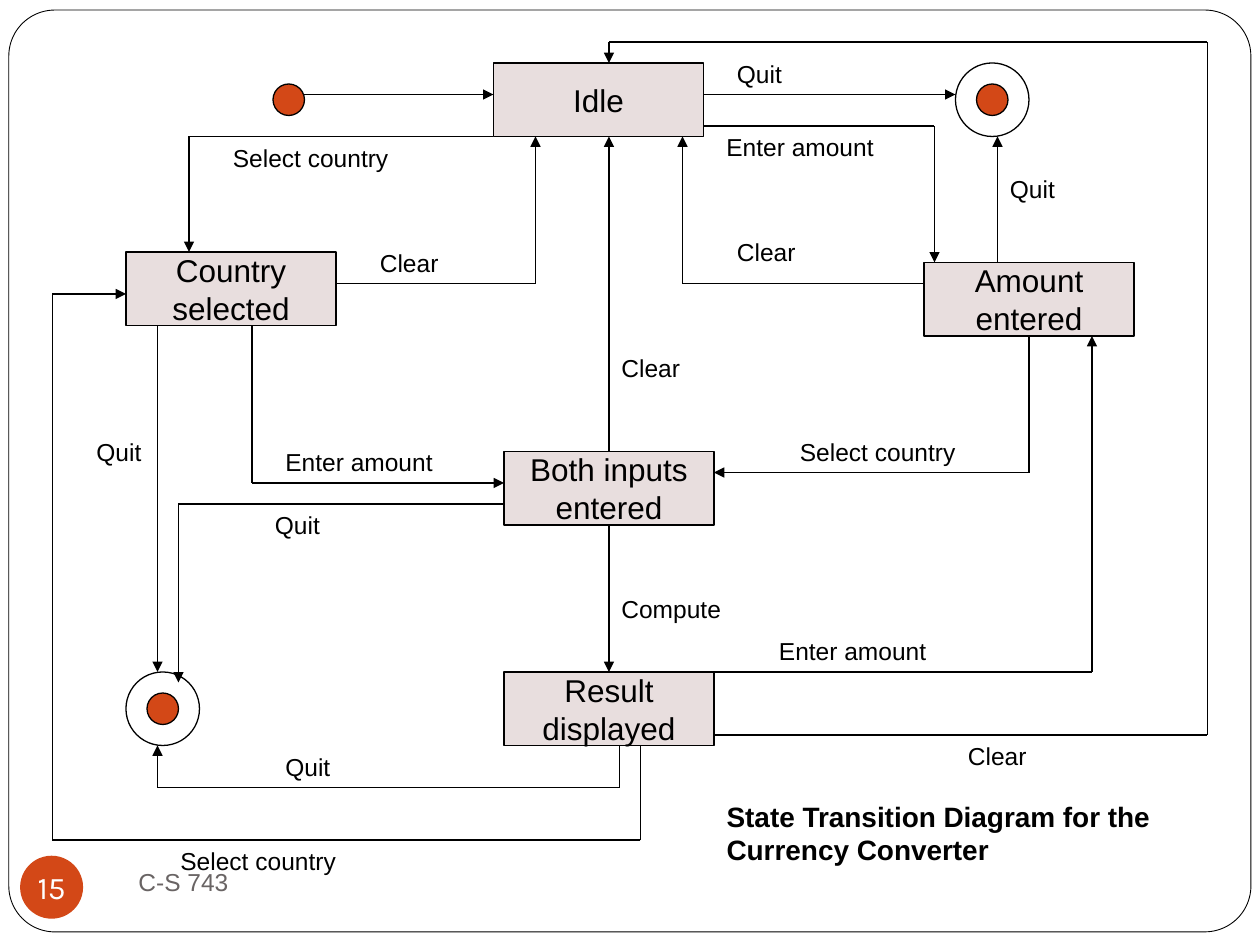
from dataclasses import dataclass

from lxml.etree import SubElement
from pptx import Presentation
from pptx.dml.color import RGBColor
from pptx.enum.shapes import MSO_CONNECTOR, MSO_SHAPE
from pptx.enum.text import MSO_ANCHOR, MSO_AUTO_SIZE, PP_ALIGN
from pptx.oxml.ns import qn
from pptx.util import Cm, Pt


@dataclass(frozen=True)
class Theme:
    """Colours, fonts, sizes and the grid step of the diagram."""
    ink: RGBColor = RGBColor(0x00, 0x00, 0x00)
    paper: RGBColor = RGBColor(0xFF, 0xFF, 0xFF)
    state: RGBColor = RGBColor(0xE8, 0xDE, 0xDE)
    accent: RGBColor = RGBColor(0xD3, 0x48, 0x17)
    muted: RGBColor = RGBColor(0x69, 0x64, 0x64)
    font: str = "Arial"
    number_font: str = "Karla"
    state_size: int = 18
    caption_size: int = 16
    label_size: int = 14
    stroke: float = 0.75
    frame_stroke: float = 0.5
    step: float = 2.54 / 12


THEME = Theme()

STATES = [
    ("Idle", 47, 6),
    ("Country\nselected", 12, 24),
    ("Amount\nentered", 88, 25),
    ("Both inputs\nentered", 48, 43),
    ("Result\ndisplayed", 48, 64),
]
STATE_WIDTH, STATE_HEIGHT = 20, 7
DOT, RING = 3, 7
START = (26, 8)
FINALS = [(91, 6), (12, 64)]

TRANSITIONS = [
    [(29, 9), (47, 9)],
    [(67, 9), (91, 9)],
    [(15, 31), (15, 64)],
    [(47, 13), (18, 13), (18, 24)],
    [(67, 12), (89, 12), (89, 25)],
    [(95, 25), (95, 13)],
    [(59, 71), (59, 75), (15, 75), (15, 71)],
    [(24, 31), (24, 46), (48, 46)],
    [(98, 32), (98, 45), (68, 45)],
    [(58, 43), (58, 13)],
    [(32, 27), (51, 27), (51, 13)],
    [(88, 27), (65, 27), (65, 13)],
    [(58, 50), (58, 64)],
    [(68, 70), (115, 70), (115, 4), (58, 4), (58, 6)],
    [(48, 48), (17, 48), (17, 65)],
    [(61, 71), (61, 80), (5, 80), (5, 28), (12, 28)],
    [(68, 64), (104, 64), (104, 32)],
]

LABELS = [
    ("Quit", 69, 5, 17),
    ("Clear", 91, 70, 16),
    ("Quit", 26, 71, 11),
    ("Compute", 58, 56, 12),
    ("Quit", 25, 48, 11),
    ("Quit", 8, 41, 9),
    ("Quit", 95, 16, 9),
    ("Select country", 75, 41, 20),
    ("Enter amount", 26, 42, 21),
    ("Clear", 35, 23, 13),
    ("Clear", 69, 22, 15),
    ("Enter amount", 68, 12, 21),
    ("Select country", 21, 13, 25),
    ("Clear", 58, 33, 11),
    ("Enter amount", 73, 60, 26),
    ("Select country", 16, 80, 36),
]
LABEL_HEIGHT = 4


def grid(*steps):
    """Turn grid steps into lengths."""
    return [Cm(step * THEME.step) for step in steps]


def write(holder, text, size, color=THEME.ink, font=THEME.font, bold=False,
          align=PP_ALIGN.LEFT, anchor=MSO_ANCHOR.TOP, wrap=True):
    """Set the text of a shape and format its runs."""
    frame = holder.text_frame
    frame.text = text
    frame.word_wrap = wrap
    frame.auto_size = MSO_AUTO_SIZE.NONE
    frame.vertical_anchor = anchor
    for paragraph in frame.paragraphs:
        paragraph.alignment = align
        for run in paragraph.runs:
            run.font.name = font
            run.font.size = Pt(size)
            run.font.bold = bold
            run.font.color.rgb = color


def add_figure(slide, kind, box, fill=None, stroke=THEME.stroke):
    """Add a preset shape on the grid, with optional fill and outline."""
    figure = slide.shapes.add_shape(kind, *grid(*box))
    figure.shadow.inherit = False
    if fill is None:
        figure.fill.background()
    else:
        figure.fill.solid()
        figure.fill.fore_color.rgb = fill
    if stroke:
        figure.line.color.rgb = THEME.ink
        figure.line.width = Pt(stroke)
    else:
        figure.line.fill.background()
    return figure


def add_state(slide, name, left, top):
    """Add a state box and return it with the middles of its sides."""
    state = add_figure(slide, MSO_SHAPE.RECTANGLE,
                       (left, top, STATE_WIDTH, STATE_HEIGHT), THEME.state)
    write(state, name, THEME.state_size, align=PP_ALIGN.CENTER,
          anchor=MSO_ANCHOR.MIDDLE, wrap=False)
    middle_x, middle_y = left + STATE_WIDTH / 2, top + STATE_HEIGHT / 2
    middles = [(middle_x, top), (left, middle_y),
               (middle_x, top + STATE_HEIGHT), (left + STATE_WIDTH, middle_y)]
    return {middle: (state, side) for side, middle in enumerate(middles)}


def add_dot(slide, left, top):
    """Add the filled dot of a start or final state."""
    add_figure(slide, MSO_SHAPE.OVAL, (left, top, DOT, DOT), THEME.accent)


def add_final(slide, left, top):
    """Add a final state, a dot inside a ring."""
    inset = (RING - DOT) / 2
    add_dot(slide, left + inset, top + inset)
    add_figure(slide, MSO_SHAPE.OVAL, (left, top, RING, RING))


def add_transition(slide, route, docks):
    """Draw a route of straight segments with an arrowhead at its end."""
    for start, end in zip(route, route[1:]):
        segment = slide.shapes.add_connector(MSO_CONNECTOR.STRAIGHT, *grid(*start, *end))
        segment.line.color.rgb = THEME.ink
        segment.line.width = Pt(THEME.stroke)
        if start in docks:
            segment.begin_connect(*docks[start])
        if end in docks:
            segment.end_connect(*docks[end])
        SubElement(segment.element.spPr, qn("a:effectLst"))
    SubElement(segment.line._get_or_add_ln(), qn("a:tailEnd"), type="triangle")


def add_label(slide, text, left, top, width, height=LABEL_HEIGHT, **style):
    """Add a text label on the grid."""
    label = slide.shapes.add_textbox(*grid(left, top, width, height))
    write(label, text, THEME.label_size, **style)


def add_caption(slide):
    """Place the slide title beneath the diagram."""
    caption = slide.shapes.title
    caption.left, caption.top, caption.width, caption.height = grid(68, 75.5, 48, 7.7)
    write(caption, "State Transition Diagram for the Currency Converter",
          THEME.caption_size, bold=True)


def add_frame(slide):
    """Add the rounded page frame behind everything else."""
    frame = add_figure(slide, MSO_SHAPE.ROUNDED_RECTANGLE,
                       (0.84, 0.96, 118.3, 87.8), THEME.paper, THEME.frame_stroke)
    frame.adjustments[0] = 0.05
    slide.shapes.title.element.addprevious(frame.element)


def add_page_number(slide):
    """Add the page number in its disc."""
    disc = add_figure(slide, MSO_SHAPE.OVAL, (1.92, 81.5, 6, 6), THEME.accent, stroke=0)
    write(disc, "15", THEME.state_size, THEME.paper, THEME.number_font,
          align=PP_ALIGN.CENTER, anchor=MSO_ANCHOR.MIDDLE, wrap=False)
    text = disc.text_frame
    text.margin_left = text.margin_right = text.margin_top = text.margin_bottom = Cm(0)


def main():
    """Build the state transition slide."""
    deck = Presentation()
    deck.slide_width, deck.slide_height = Cm(25.4), Cm(19.05)
    slide = deck.slides.add_slide(deck.slide_layouts[5])
    add_frame(slide)
    docks = {}
    for state in STATES:
        docks.update(add_state(slide, *state))
    add_dot(slide, *START)
    for final in FINALS:
        add_final(slide, *final)
    for route in TRANSITIONS:
        add_transition(slide, route, docks)
    for label in LABELS:
        add_label(slide, *label)
    add_caption(slide)
    add_label(slide, "C-S 743", 12, 81, 52, 6, color=THEME.muted, anchor=MSO_ANCHOR.MIDDLE)
    add_page_number(slide)
    deck.save("out.pptx")


if __name__ == "__main__":
    main()
